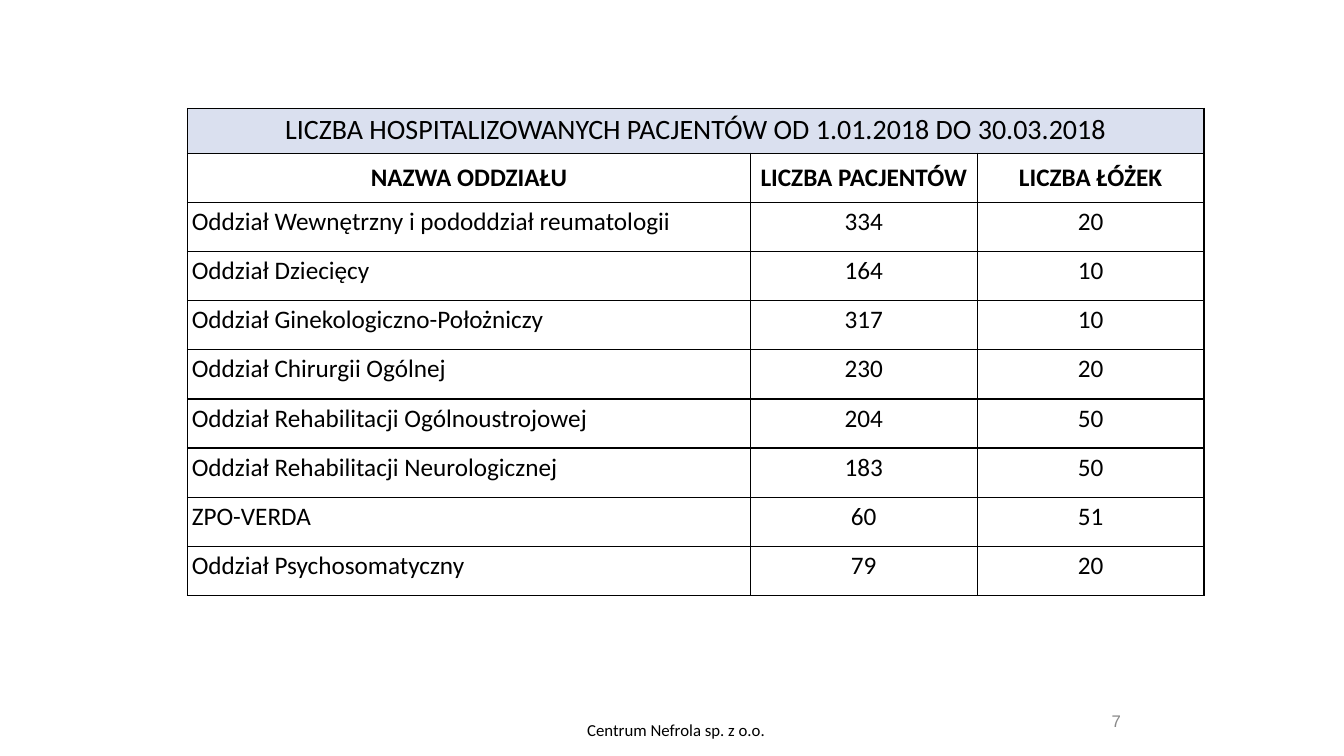
from lxml.etree import SubElement
from pptx import Presentation
from pptx.dml.color import RGBColor
from pptx.enum.text import MSO_ANCHOR, PP_ALIGN
from pptx.oxml.ns import qn
from pptx.util import Pt

COLORS = {"ink": "000000", "head": "DAE0EF", "paper": "FFFFFF", "page": "888888"}
MARGINS = ("margin_left", "margin_top", "margin_right", "margin_bottom")


def write(para, text, align, color="ink", **font):
    """Fill a paragraph with one run; font takes python-pptx font attributes."""
    para.alignment = align
    run = para.add_run()
    run.text = text
    run.font.color.rgb = RGBColor.from_string(COLORS[color])
    for key, value in font.items():
        setattr(run.font, key, value)


def border(cell):
    """Draw a thin line on all four sides; must come before the cell fill."""
    props = cell._tc.get_or_add_tcPr()
    for side in ("a:lnL", "a:lnR", "a:lnT", "a:lnB"):
        line = SubElement(props, qn(side), w=str(Pt(1)))
        fill = SubElement(line, qn("a:solidFill"))
        SubElement(fill, qn("a:srgbClr"), val=COLORS["ink"])


deck = Presentation()
deck.slide_width, deck.slide_height = Pt(960), Pt(540)
slide = deck.slides.add_slide(deck.slide_layouts[6])

# Table of wards
rows = [
    ("LICZBA HOSPITALIZOWANYCH PACJENTÓW OD 1.01.2018 DO 30.03.2018", "", ""),
    ("NAZWA ODDZIAŁU", "LICZBA PACJENTÓW", "LICZBA ŁÓŻEK"),
    ("Oddział Wewnętrzny i pododdział reumatologii", "334", "20"),
    ("Oddział Dziecięcy", "164", "10"),
    ("Oddział Ginekologiczno-Położniczy", "317", "10"),
    ("Oddział Chirurgii Ogólnej", "230", "20"),
    ("Oddział Rehabilitacji Ogólnoustrojowej", "204", "50"),
    ("Oddział Rehabilitacji Neurologicznej", "183", "50"),
    ("ZPO-VERDA", "60", "51"),
    ("Oddział Psychosomatyczny", "79", "20"),
]
widths = (402, 162, 162)
heights = [32] + [35.1] * (len(rows) - 1)
frame = slide.shapes.add_table(len(rows), len(widths), Pt(134), Pt(77.5),
                               Pt(sum(widths)), Pt(sum(heights)))
table = frame.table
table.first_row = table.horz_banding = False
for col, width in zip(table.columns, widths):
    col.width = Pt(width)
for row, height in zip(table.rows, heights):
    row.height = Pt(height)
table.cell(0, 0).merge(table.cell(0, 2))

for r, texts in enumerate(rows):
    for c, text in enumerate(texts):
        cell = table.cell(r, c)
        for side in MARGINS:
            setattr(cell, side, Pt(3))
        cell.vertical_anchor = MSO_ANCHOR.MIDDLE if r == 1 else MSO_ANCHOR.TOP
        border(cell)
        cell.fill.solid()
        shade = COLORS["head" if r == 0 else "paper"]
        cell.fill.fore_color.rgb = RGBColor.from_string(shade)
        if text:
            align = PP_ALIGN.LEFT if r > 1 and c == 0 else PP_ALIGN.CENTER
            write(cell.text_frame.paragraphs[0], text, align, name="Calibri",
                  size=Pt(18 if r else 20), bold=r == 1)

# Page number and footer
notes = [
    ("7", (790.5, 504, 13.7, 21.6), 3.6, False, PP_ALIGN.RIGHT, "page", "Arial"),
    ("Centrum Nefrola sp. z o.o.", (321, 507, 324, 28.8), 7.2, True,
     PP_ALIGN.CENTER, "ink", "Calibri"),
]
for text, place, inset, wrap, align, color, face in notes:
    body = slide.shapes.add_textbox(*map(Pt, place)).text_frame
    body.word_wrap = wrap
    body.vertical_anchor = MSO_ANCHOR.MIDDLE
    for side in MARGINS:
        setattr(body, side, Pt(min(inset, 3.6) if side in MARGINS[1::2] else inset))
    write(body.paragraphs[0], text, align, color, name=face, size=Pt(12))

deck.save("out.pptx")
